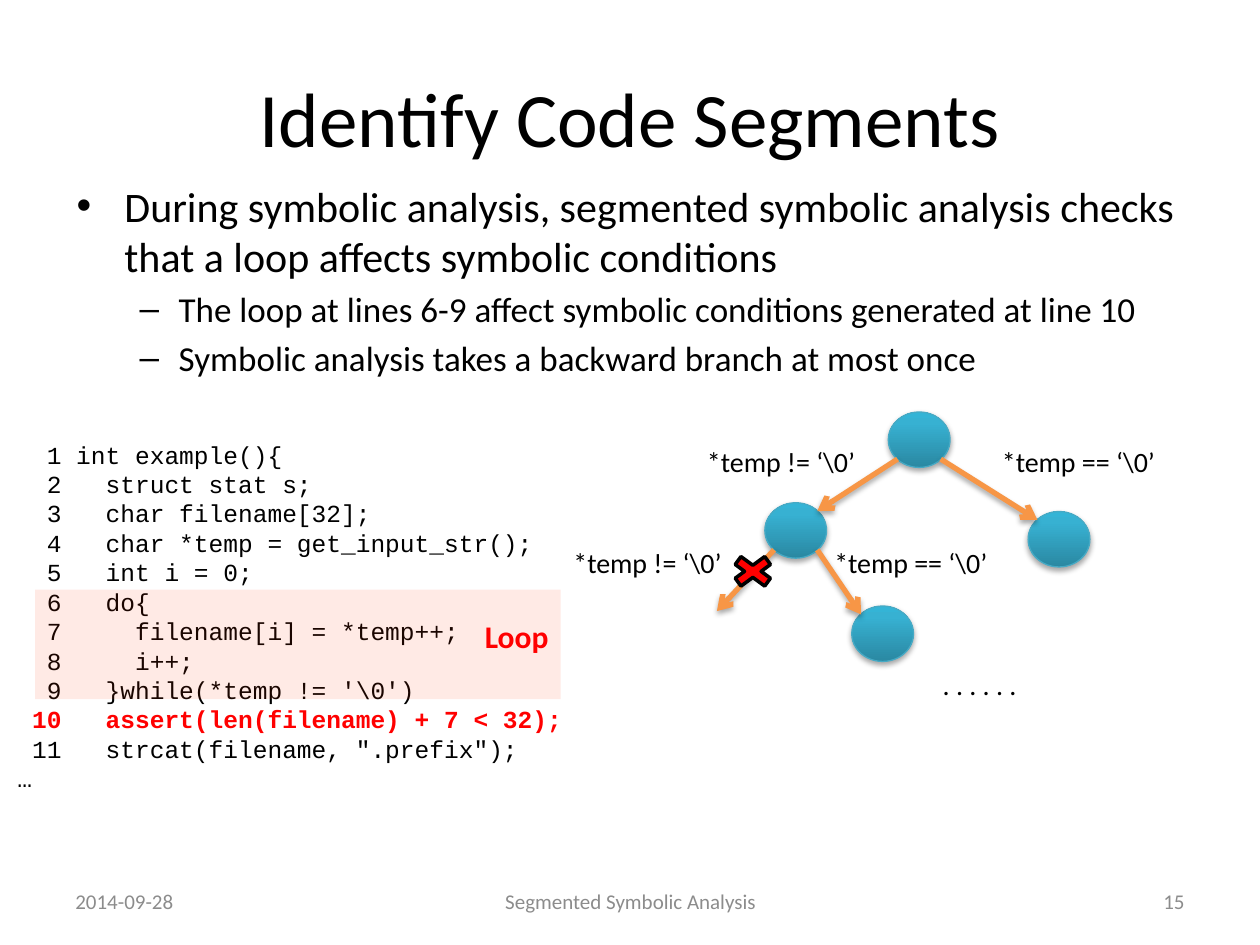
import lxml.etree
import pptx
import pptx.dml.color
import pptx.enum.shapes
import pptx.enum.text
import pptx.oxml
import pptx.oxml.ns
import pptx.util

Inches = pptx.util.Inches
Shapes = pptx.enum.shapes.MSO_SHAPE
Align = pptx.enum.text.PP_ALIGN
Anchor = pptx.enum.text.MSO_ANCHOR
qn = pptx.oxml.ns.qn
NAMESPACE = pptx.oxml.ns.nsdecls("a")

COLORS = {
    "text": "000000", "footer": "8C8C8C", "alert": "FF0000", "loop": "FF3300",
    "arrow": "F79646", "node_line": "46AAC5",
    "node_dark": "2A88A2", "node_mid": "37B1D2", "node_light": "34B4D6",
}
NODE_WIDTH, NODE_HEIGHT = 0.49, 0.44

BULLETS = [
    (0, "During symbolic analysis, segmented symbolic analysis checks "
        "that a loop affects symbolic conditions"),
    (1, "The loop at lines 6-9 affect symbolic conditions generated at line 10"),
    (1, "Symbolic analysis takes a backward branch at most once"),
]
# Bullet sign, text size, left indent and hanging indent of each level
LEVELS = [("•", 24, 0.38, 0.38), ("–", 20, 0.81, 0.31)]

CODE = r"""int example(){
  struct stat s;
  char filename[32];
  char *temp = get_input_str();
  int i = 0;
  do{
    filename[i] = *temp++;
    i++;
  }while(*temp != '\0')
  assert(len(filename) + 7 < 32);
  strcat(filename, ".prefix");""".split("\n")
ASSERT_LINE = 10


def rgb(name):
    return pptx.dml.color.RGBColor.from_string(COLORS[name])


def write(para, text, size=16, color="text", font="Calibri", bold=False,
          align=Align.LEFT):
    para.alignment = align
    span = para.add_run()
    span.text = text
    span.font.size = pptx.util.Pt(size)
    span.font.name = font
    span.font.bold = bold
    span.font.color.rgb = rgb(color)


def add_shadow(item):
    properties = item._element.spPr
    effects = properties.find(qn("a:effectLst"))
    if effects is None:
        effects = lxml.etree.SubElement(properties, qn("a:effectLst"))
    effects.append(pptx.oxml.parse_xml(
        f'<a:outerShdw {NAMESPACE} blurRad="40000" dist="23000" dir="5400000" '
        'rotWithShape="0"><a:srgbClr val="000000"><a:alpha val="35000"/>'
        '</a:srgbClr></a:outerShdw>'))


class SlideBuilder:
    def __init__(self, deck):
        self.page = deck.slides.add_slide(deck.slide_layouts[6])

    def box(self, left, top, width, height, anchor=Anchor.TOP):
        box = self.page.shapes.add_textbox(
            Inches(left), Inches(top), Inches(width), Inches(height))
        box.text_frame.word_wrap = True
        box.text_frame.vertical_anchor = anchor
        return box.text_frame

    def label(self, text, left, top, width, height, anchor=Anchor.TOP, **style):
        write(self.box(left, top, width, height, anchor).paragraphs[0],
              text, **style)

    def paragraphs(self, frame, count):
        return [frame.paragraphs[0]] + [frame.add_paragraph()
                                        for _ in range(count - 1)]

    def bullets(self, items, *place):
        paras = self.paragraphs(self.box(*place), len(items))
        for para, (level, text) in zip(paras, items):
            sign, size, indent, hanging = LEVELS[level]
            write(para, text, size=size)
            para.level = level
            para.space_before = pptx.util.Pt(size * 0.2)
            properties = para._p.get_or_add_pPr()
            properties.set("marL", str(Inches(indent)))
            properties.set("indent", str(-Inches(hanging)))
            lxml.etree.SubElement(properties, qn("a:buFont"), typeface="Arial")
            lxml.etree.SubElement(properties, qn("a:buChar"), char=sign)

    def code(self, lines, *place):
        rows = [f"{number:>3} {line}" for number, line in enumerate(lines, 1)]
        paras = self.paragraphs(self.box(*place), len(rows) + 1)
        for number, (para, row) in enumerate(zip(paras, rows + ["…"]), 1):
            marked = number == ASSERT_LINE
            write(para, row, size=14, font="Courier New", bold=marked,
                  color="alert" if marked else "text")

    def shape(self, kind, left, top, width, height, fill, line=None,
              line_width=1):
        shape = self.page.shapes.add_shape(
            kind, Inches(left), Inches(top), Inches(width), Inches(height))
        shape.shadow.inherit = False
        shape.fill.solid()
        shape.fill.fore_color.rgb = rgb(fill)
        if line:
            shape.line.color.rgb = rgb(line)
            shape.line.width = pptx.util.Pt(line_width)
        else:
            shape.line.fill.background()
        return shape

    def overlay(self, *place, fill, opacity):
        shape = self.shape(Shapes.RECTANGLE, *place, fill)
        color = shape._element.spPr.find(qn("a:solidFill"))[0]
        lxml.etree.SubElement(color, qn("a:alpha"), val=str(opacity * 1000))

    def node(self, left, top):
        node = self.shape(Shapes.OVAL, left, top, NODE_WIDTH, NODE_HEIGHT,
                          "node_mid", "node_line", 0.75)
        node.fill.gradient()
        node.fill.gradient_angle = 90
        stops = node._element.spPr.find(qn("a:gradFill")).find(qn("a:gsLst"))
        for stop in list(stops):
            stops.remove(stop)
        for position, name in ((0, "node_dark"), (80, "node_mid"),
                               (100, "node_light")):
            stop = lxml.etree.SubElement(stops, qn("a:gs"),
                                         pos=str(position * 1000))
            lxml.etree.SubElement(stop, qn("a:srgbClr"), val=COLORS[name])
        add_shadow(node)

    def arrow(self, start, end):
        arrow = self.page.shapes.add_connector(
            pptx.enum.shapes.MSO_CONNECTOR.STRAIGHT,
            *(Inches(value) for value in (*start, *end)))
        arrow.line.color.rgb = rgb("arrow")
        arrow.line.width = pptx.util.Pt(3)
        lxml.etree.SubElement(arrow.line._get_or_add_ln(), qn("a:tailEnd"),
                              type="arrow")
        add_shadow(arrow)


def rim(node, side, level):
    """Diagonal point on a node: side -1 left, 1 right; level -1 top, 1 bottom."""
    left, top = node
    return (left + NODE_WIDTH * (0.5 + side * 0.35),
            top + NODE_HEIGHT * (0.5 + level * 0.35))


def main():
    deck = pptx.Presentation()
    deck.slide_width, deck.slide_height = Inches(10), Inches(7.5)
    slide = SlideBuilder(deck)

    # Title and bullets
    slide.label("Identify Code Segments", 0.5, 0.3, 9, 1.25, Anchor.MIDDLE,
                size=44, align=Align.CENTER)
    slide.bullets(BULLETS, 0.51, 1.38, 9, 4.95)

    # Footer
    for text, left, width, align in (
            ("2014-09-28", 0.5, 2.33, Align.LEFT),
            ("Segmented Symbolic Analysis", 3.42, 3.17, Align.CENTER),
            ("15", 7.17, 2.33, Align.RIGHT)):
        slide.label(text, left, 6.95, width, 0.4, Anchor.MIDDLE,
                    size=12, color="footer", align=align)

    # Code listing
    slide.code(CODE, 0.04, 3.44, 4.8, 2.93)

    # Branch tree
    root, loop_node, exit_node, inner_exit = nodes = [
        (7.05, 3.27), (6.07, 3.99), (8.16, 4.06), (6.76, 4.81)]
    for node in nodes:
        slide.node(*node)
    slide.arrow(rim(root, -1, 1), rim(loop_node, 1, -1))
    slide.arrow(rim(root, 1, 1), rim(exit_node, -1, -1))
    slide.arrow(rim(loop_node, -1, 1), (5.69, 4.85))
    slide.arrow(rim(loop_node, 1, 1), rim(inner_exit, -1, -1))
    for text, left, top in (
            ("*temp != ‘\\0’", 5.28, 3.48), ("*temp == ‘\\0’", 7.64, 3.48),
            ("*temp != ‘\\0’", 4.22, 4.28), ("*temp == ‘\\0’", 6.31, 4.28),
            (". . . . . . ", 6.88, 5.25)):
        slide.label(text, left, top, 1.84, 0.37, align=Align.CENTER)

    # Loop highlight and blocked branch
    slide.overlay(0.28, 4.68, 4.17, 0.87, fill="loop", opacity=10)
    slide.label("Loop", 3.75, 4.85, 0.9, 0.4, size=18, color="alert", bold=True)
    slide.shape(Shapes.MATH_MULTIPLY, 5.75, 4.37, 0.45, 0.33,
                "alert", "text", 2)

    deck.save("out.pptx")


if __name__ == "__main__":
    main()
